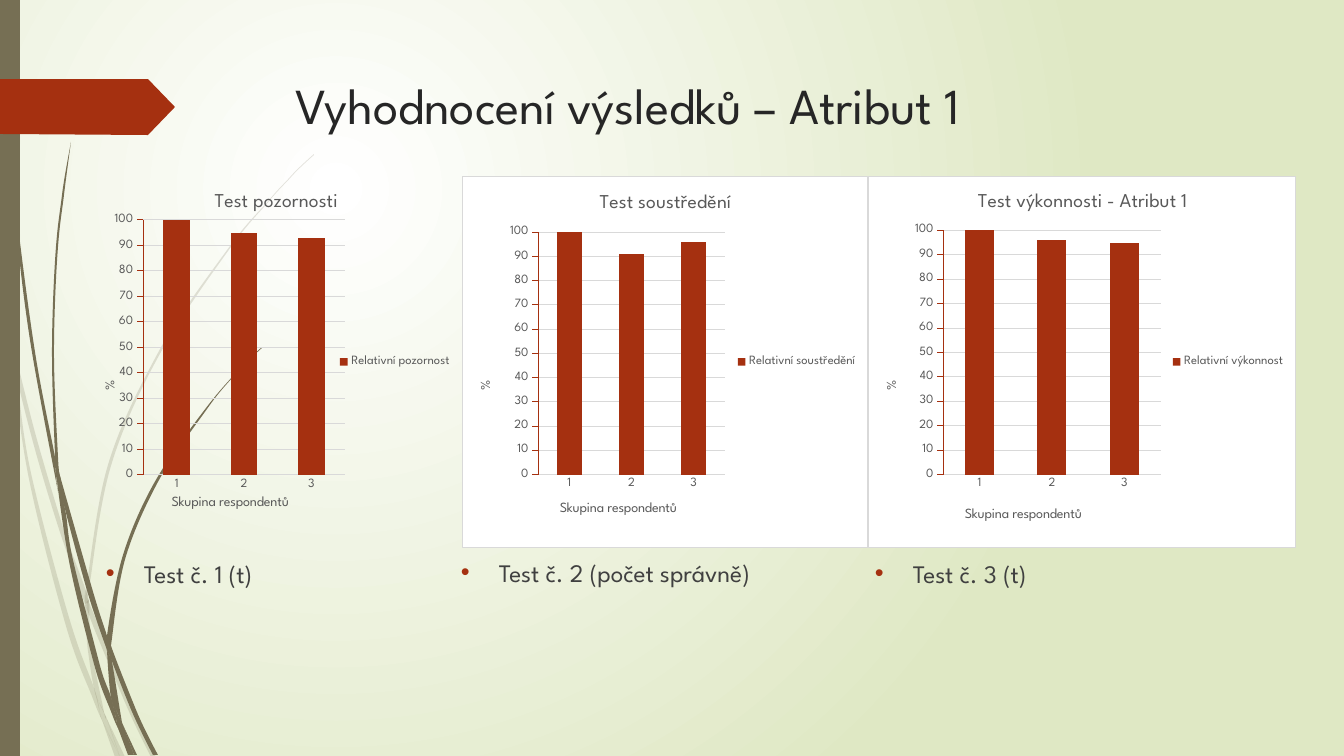
import math

import pptx
import pptx.util
import pptx.chart.data
import pptx.dml.color
import pptx.enum.chart
import pptx.enum.shapes
import pptx.enum.text
import pptx.oxml
import pptx.oxml.ns

SCALE = 12192000 / 1344  # EMU per px
FONT = "League Spartan"
RUST, OLIVE, GRID, GRAY = "A53010", "766F54", "D9D9D9", "595959"

# Grass blades: anchor points of closed loops in px
PALE = [
    [(11, 353), (9, 325), (0, 284), (0, 301), (10, 347)],
    [(58, 526), (85, 604), (86, 591), (62, 524), (36, 436), (14, 348), (17, 379), (36, 453)],
    [(93, 612), (89, 601), (89, 615), (124, 700), (151, 757), (156, 757), (128, 698)],
    [(120, 757), (125, 757), (106, 717)],
    [(94, 688), (71, 624), (31, 473), (17, 379), (11, 353), (28, 474), (66, 626), (93, 699),
     (102, 720), (100, 713)],
    [(85, 604), (88, 651), (94, 688), (97, 698), (106, 717), (104, 712), (92, 651), (89, 615),
     (89, 613)],
    [(89, 589), (111, 466), (161, 352), (231, 247), (270, 200), (292, 176), (314, 155),
     (314, 154), (291, 176), (270, 199), (230, 246), (159, 351), (108, 465), (86, 589),
     (86, 591), (89, 601)],
    [(102, 720), (115, 757), (120, 757)],
    [(89, 613), (89, 615), (89, 601), (86, 591), (85, 604)],
    [(97, 698), (94, 688), (100, 713), (102, 720), (120, 757), (106, 717)],
]
DARK = [
    [(7, 111), (17, 235), (33, 358), (56, 481), (57, 485), (55, 461), (55, 457), (36, 358),
     (19, 234), (8, 110), (5, 48), (4, 0), (3, 0), (4, 48)],
    [(89, 597), (107, 650), (107, 638), (107, 636), (94, 595), (60, 476), (65, 509)],
    [(114, 654), (111, 646), (112, 661), (133, 714), (153, 755), (158, 755), (137, 712)],
    [(111, 697), (99, 662), (73, 560), (65, 509), (57, 481), (69, 561), (94, 664), (112, 714),
     (118, 728), (117, 723)],
    [(60, 476), (58, 457), (54, 352), (58, 247), (64, 195), (71, 142), (62, 195), (56, 247),
     (52, 352), (55, 453)],
    [(134, 755), (137, 755), (123, 725)],
    [(57, 481), (65, 509), (60, 476), (55, 453), (55, 457)],
    [(112, 638), (126, 556), (159, 480), (207, 409), (233, 377), (247, 362), (263, 347),
     (262, 347), (247, 361), (233, 376), (206, 408), (157, 478), (123, 555), (107, 636),
     (111, 646)],
    [(118, 728), (128, 755), (132, 755)],
    [(107, 650), (111, 697), (117, 712), (123, 725), (122, 722), (112, 661), (110, 656)],
    [(107, 650), (110, 656), (112, 661), (111, 646), (107, 636), (107, 638)],
    [(117, 712), (111, 697), (117, 723), (118, 728), (131, 755), (134, 755), (123, 725)],
]
ARROW = [(0, 79), (148, 79), (175, 107), (148, 135), (0, 134)]

# Charts: frame and plot as left, top, width, height; title spots as left, top
CHARTS = [
    dict(name="Test pozornosti", label="Relativní pozornost", vals=(100, 95, 93),
         frame=(89, 176, 373, 372), plot=(143, 220, 202, 255),
         head=(211, 188), foot=(169, 493), side=(101, 378), card=False),
    dict(name="Test soustředění", label="Relativní soustředění", vals=(100, 91, 96),
         frame=(462, 176, 406, 372), plot=(538, 232, 187, 243),
         head=(596, 189), foot=(557, 499), side=(476, 378), card=True),
    dict(name="Test výkonnosti - Atribut 1", label="Relativní výkonnost", vals=(100, 96, 95),
         frame=(868, 176, 428, 372), plot=(943, 230, 218, 245),
         head=(974, 188), foot=(962, 505), side=(882, 378), card=True),
]
NOTES = [("Test č. 1 (t)", 96, 553), ("Test č. 2 (počet správně)", 451, 552),
         ("Test č. 3 (t)", 865, 553)]
qn = pptx.oxml.ns.qn


def px(num):
    return pptx.util.Emu(round(num * SCALE))


def tint(code):
    return pptx.dml.color.RGBColor.from_string(code)


def style(item, vals):
    for key, val in vals.items():
        setattr(item, key, val)


def node(text):
    return pptx.oxml.parse_xml(f'<a:x {pptx.oxml.ns.nsdecls("a", "c")}>{text}</a:x>')[0]


def slope(a, b, c):
    """Tangent at b, or none at a sharp corner."""
    turn = math.atan2(c[1] - b[1], c[0] - b[0]) - math.atan2(b[1] - a[1], b[0] - a[0])
    return (0, 0) if math.cos(turn) < 0.8 else ((c[0] - a[0]) / 6, (c[1] - a[1]) / 6)


class Deck:
    def __init__(self):
        self.file = pptx.Presentation()
        style(self.file, {"slide_width": px(1344), "slide_height": px(756)})
        self.slide = self.file.slides.add_slide(self.file.slide_layouts[5])
        self.shapes = self.slide.shapes

    def font(self, font, size, color):
        style(font, {"name": FONT, "size": pptx.util.Pt(size), "bold": False})
        font.color.rgb = tint(color)

    def paint(self, shape, color, alpha=None):
        shape.shadow.inherit = False
        shape.fill.solid()
        shape.fill.fore_color.rgb = tint(color)
        shape.line.fill.background()
        if alpha:
            code = shape._element.spPr.find(".//" + qn("a:srgbClr"))
            code.append(node(f'<a:alpha val="{alpha * 1000}"/>'))

    def ground(self, inner, outer):
        fill = self.slide.background.fill
        fill.gradient()
        for stop, color, spot in zip(fill.gradient_stops, (inner, outer), (0, 1)):
            stop.color.rgb = tint(color)
            stop.position = spot
        grad = self.slide.element.find(".//" + qn("a:gradFill"))
        grad.remove(grad.find(qn("a:lin")))
        grad.append(node('<a:path path="circle"><a:fillToRect l="50000" t="50000" '
                         'r="100000" b="100000"/></a:path>'))

    def loop(self, pts, color, alpha=None):
        """Closed outline, smooth except at sharp corners."""
        count = len(pts)
        bends = [slope(pts[i - 1], pts[i], pts[(i + 1) % count]) for i in range(count)]
        edge = []
        for i in range(count):
            (x, y), (u, v) = pts[i], bends[i]
            (r, s), (p, q) = pts[(i + 1) % count], bends[(i + 1) % count]
            edge += [(x + u, y + v), (r - p, s - q), (r, s)]
        pen = self.shapes.build_freeform(*pts[0], scale=SCALE)
        pen.add_line_segments(edge, close=True)
        shape = pen.convert_to_shape()
        lines = list(shape._element.iter(qn("a:lnTo")))
        for i in range(0, len(lines), 3):
            bend = node("<a:cubicBezTo/>")
            lines[i].addprevious(bend)
            for line in lines[i:i + 3]:
                bend.append(line[0])
                line.getparent().remove(line)
        self.paint(shape, color, alpha)

    def title(self, text, box):
        shape = self.shapes.title
        style(shape, dict(zip(("left", "top", "width", "height"), map(px, box))))
        style(shape.text_frame, {
            "text": text, "word_wrap": True,
            "vertical_anchor": pptx.enum.text.MSO_ANCHOR.TOP,
            "auto_size": pptx.enum.text.MSO_AUTO_SIZE.NONE})
        para = shape.text_frame.paragraphs[0]
        para.alignment = pptx.enum.text.PP_ALIGN.LEFT
        self.font(para.runs[0].font, 36, "262626")

    def note(self, text, left, top):
        frame = self.shapes.add_textbox(px(left), px(top), px(433), px(53)).text_frame
        style(frame, {"text": text, "word_wrap": True})
        para = frame.paragraphs[0]
        para.space_before = pptx.util.Pt(10)
        self.font(para.runs[0].font, 18, "404040")
        props = para._p.get_or_add_pPr()
        props.set("marL", str(px(38)))
        props.set("indent", str(px(-38)))
        for part in (f'<a:buClr><a:srgbClr val="{RUST}"/></a:buClr>',
                     '<a:buFont typeface="Arial"/>', '<a:buChar char="•"/>'):
            props.append(node(part))

    def place(self, item, frame, box, index):
        """Fix a chart part at px on the slide."""
        for old in item.findall(qn("c:layout")):
            item.remove(old)
        x, y, wide, high = frame
        rates = [(box[0] - x) / wide, (box[1] - y) / high, *(
            a / b for a, b in zip(box[2:], (wide, high)))]
        inner = '<c:layoutTarget val="inner"/>' if len(box) == 4 else ""
        rows = "".join(f'<c:{k} val="{v:.4f}"/>' for k, v in zip("xywh", rates))
        item.insert(index, node(
            f'<c:layout><c:manualLayout>{inner}<c:xMode val="edge"/>'
            f'<c:yMode val="edge"/>{rows}</c:manualLayout></c:layout>'))

    def chart(self, name, label, vals, frame, plot, head, foot, side, card):
        enum = pptx.enum.chart
        data = pptx.chart.data.CategoryChartData()
        data.categories = ["1", "2", "3"]
        data.add_series(label, vals)
        chart = self.shapes.add_chart(
            enum.XL_CHART_TYPE.COLUMN_CLUSTERED, *map(px, frame), data).chart
        self.font(chart.font, 10, "000000")
        # Bars
        style(chart.plots[0], {"gap_width": 150, "vary_by_categories": False})
        fill = chart.plots[0].series[0].format.fill
        fill.solid()
        fill.fore_color.rgb = tint(RUST)
        # Axes
        marks = enum.XL_TICK_MARK
        cats, rate = chart.category_axis, chart.value_axis
        style(cats, {"major_tick_mark": marks.NONE, "has_major_gridlines": False})
        style(rate, {"major_tick_mark": marks.OUTSIDE, "has_major_gridlines": True,
                     "minimum_scale": 0, "maximum_scale": 100, "major_unit": 10})
        for axis in (cats, rate):
            self.font(axis.tick_labels.font, 9, GRAY)
        for line, color in ((cats.format.line, GRID), (rate.format.line, RUST),
                            (rate.major_gridlines.format.line, GRID)):
            line.color.rgb = tint(color)
            line.width = pptx.util.Pt(0.75)
        # Titles
        for owner, text, size, spot in (
                (chart.chart_title, name, 14, head),
                (cats.axis_title, "Skupina respondentů", 10, foot),
                (rate.axis_title, "%", 10, side)):
            owner.text_frame.text = text
            self.font(owner.text_frame.paragraphs[0].runs[0].font, size, GRAY)
            self.place(owner._element, frame, spot, 1)
        # Legend
        chart.has_legend = True
        style(chart.legend, {"position": enum.XL_LEGEND_POSITION.RIGHT,
                             "include_in_layout": False})
        self.font(chart.legend.font, 9, GRAY)
        # Plot area and card
        body = chart.element.find(qn("c:chart"))
        self.place(body.find(qn("c:plotArea")), frame, plot, 0)
        solid = '<a:solidFill><a:srgbClr val="{}"/></a:solidFill>'
        back, rim = (solid.format("FFFFFF"), solid.format(GRID)) if card else ("<a:noFill/>",) * 2
        body.addnext(node(f'<c:spPr>{back}<a:ln w="9525">{rim}</a:ln></c:spPr>'))


def main():
    deck = Deck()
    # Backdrop
    deck.ground("FFFFFF", "DFE8C4")
    for blades, alpha in ((PALE, 20), (DARK, None)):
        for pts in blades:
            deck.loop(pts, OLIVE, alpha)
    bar = deck.shapes.add_shape(pptx.enum.shapes.MSO_SHAPE.RECTANGLE, *map(px, (0, 0, 20, 756)))
    deck.paint(bar, OLIVE)
    deck.loop(ARROW, RUST)
    # Content
    deck.title("Vyhodnocení výsledků – Atribut 1", (285, 69, 983, 141))
    for item in CHARTS:
        deck.chart(**item)
    for item in NOTES:
        deck.note(*item)
    deck.file.save("out.pptx")


if __name__ == "__main__":
    main()
